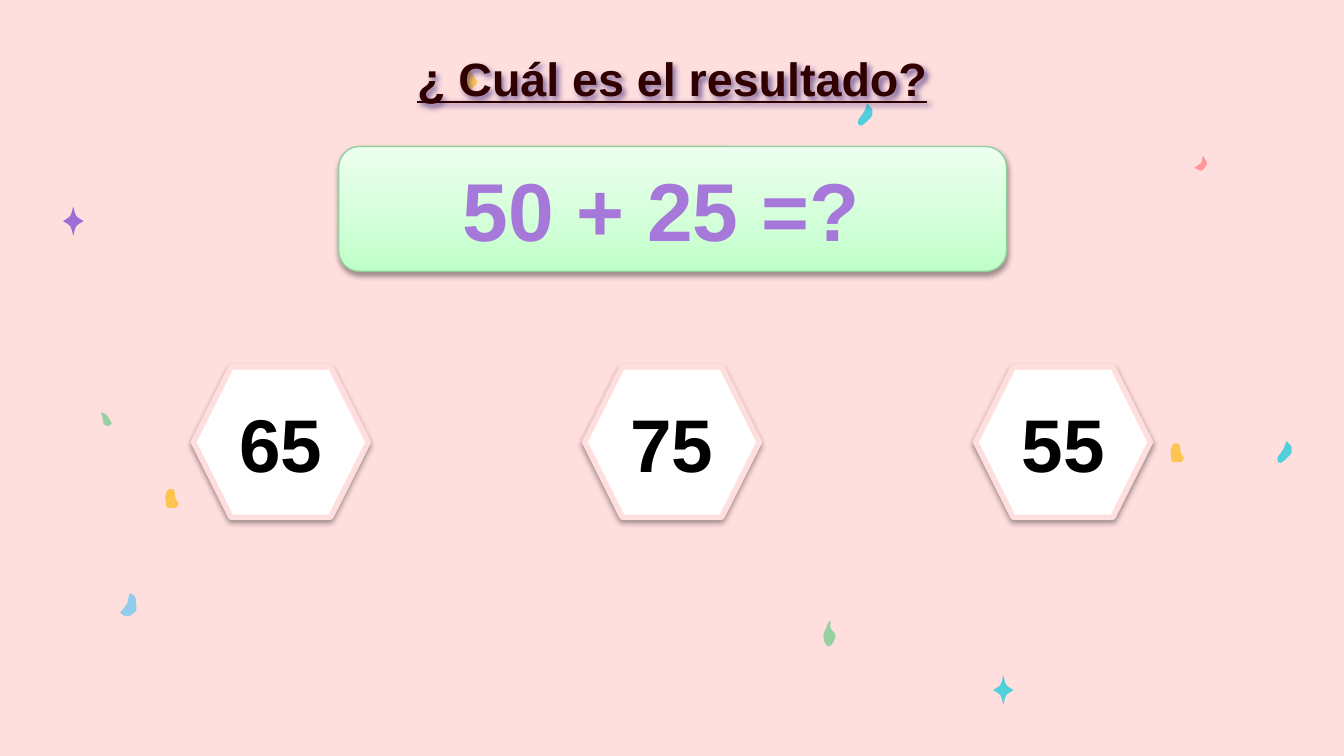
from dataclasses import dataclass
from copy import deepcopy
from math import cos, radians, sin

from lxml import etree
from pptx import Presentation
from pptx import util as u
from pptx.dml.color import RGBColor
from pptx.enum import shapes, text
from pptx.oxml.ns import qn

Point = tuple[float, float]


@dataclass(frozen=True)
class Theme:
    font: str = "Arial"
    background: str = "FFDEDE"
    title: str = "300000"
    question: str = "A578DA"
    answer: str = "000000"
    white: str = "FFFFFF"
    border: str = "93CE9C"
    gradient: tuple = ((0, "BEFFC7"), (0.35, "D1FFD7"), (1, "EDFFEF"))
    orange: str = "FCC552"
    teal: str = "52CFDD"
    green: str = "98D1A1"
    blue: str = "8FCDEA"
    red: str = "FF9797"
    purple: str = "9D6ED3"
    title_size: int = 25
    question_size: int = 44
    answer_size: int = 40


@dataclass(frozen=True)
class Frame:
    left: float
    top: float
    width: float
    height: float

    def lengths(self) -> list:
        return [u.Inches(v) for v in (self.left, self.top, self.width, self.height)]


@dataclass(frozen=True)
class Confetti:
    outline: str
    color: str
    frame: Frame
    rotation: float = 0


@dataclass(frozen=True)
class Shadow:
    color: str
    alpha: int
    blur: float
    distance: float
    direction: int


THEME = Theme()
SOFT_SHADOW = Shadow("000000", 38, 3.15, 1.57, 90)
TITLE_SHADOW = Shadow("3F2A78", 65, 3, 1.5, 45)
DETAIL = 100

OUTLINES: dict[str, list[Point]] = {
    "flake": [(1, -7), (-2, -7), (-4, -4), (-4.5, 0), (-4, 3), (-4, 5), (-3, 7),
              (0, 7), (3, 7), (5, 4), (3, 0), (2, -6)],
    "swoosh": [(-5.5, 3), (-5.5, 6), (-3.5, 7), (-0.5, 5), (1.5, 3), (3.5, 1),
               (4.5, -1), (4.5, -5), (2.5, -7.5), (1.5, -9), (0.5, -8),
               (-0.5, -5), (-1.5, -3), (-3.5, 0)],
    "leaf": [(5, 3), (4, 1), (1, -3), (-2, -5), (-4, -5), (-3, -3), (-2, 2),
             (-1, 4), (2, 5), (4, 4)],
    "moon": [(6.5, -1), (5.5, -6), (2.5, -8), (1.5, -8), (0.5, -5), (-0.5, -1),
             (-3.5, 3), (-5.5, 5), (-5.5, 6), (-2.5, 8), (1.5, 8), (4.5, 6), (6.5, 4)],
    "petal": [(4.5, -1.5), (2.5, -5.5), (1.5, -6.5), (0.5, -1.5), (-2.5, 1.5),
              (-4.5, 3), (-3.5, 4), (0.5, 5.5), (2.5, 3.5), (4.5, 0.5)],
    "drop": [(0.5, -9.5), (-1.5, -7.5), (-2.5, -4.5), (-4.5, 0), (-4, 5), (-1.5, 8.5),
             (0.5, 8.5), (2.5, 6.5), (4.5, 2), (3.5, -1), (1.5, -3), (0.5, -6)],
    "seed": [(0.5, -8.5), (-2.5, -5.5), (-4.5, 0), (-3.5, 6.5), (-1.5, 8.5),
             (0.5, 7), (3.5, 3.5), (3.5, 1), (0.5, -4)],
    "star": [(0, -10.5), (1, -7), (2.5, -3.5), (6, -1), (7.5, 0), (6, 1), (2.5, 3.5),
             (1, 7), (0, 10.5), (-1, 7), (-2.5, 3.5), (-6, 1), (-7.5, 0), (-6, -1),
             (-2.5, -3.5), (-1, -7)],
}

CONFETTI = [
    Confetti("flake", THEME.orange, Frame(1.23, 3.64, 0.1, 0.14), 3.3),
    Confetti("swoosh", THEME.teal, Frame(6.36, 0.82, 0.17, 0.08), 292.8),
    Confetti("leaf", THEME.green, Frame(0.74, 3.08, 0.1, 0.08), 90),
    Confetti("moon", THEME.blue, Frame(0.87, 4.44, 0.17, 0.12), 90),
    Confetti("petal", THEME.red, Frame(8.88, 1.17, 0.11, 0.09), 90),
    Confetti("drop", THEME.green, Frame(6.13, 4.62, 0.09, 0.19), 11.4),
    Confetti("seed", THEME.orange, Frame(3.45, 0.51, 0.11, 0.15), 29.1),
    Confetti("swoosh", THEME.teal, Frame(9.48, 3.33, 0.17, 0.08), 292.8),
    Confetti("star", THEME.purple, Frame(0.47, 1.54, 0.15, 0.21)),
    Confetti("star", THEME.teal, Frame(7.39, 5.03, 0.15, 0.21)),
    Confetti("flake", THEME.orange, Frame(8.71, 3.3, 0.1, 0.14), 3.3),
]


def rgb(color: str) -> RGBColor:
    return RGBColor.from_string(color)


def paint(shape, color: str) -> None:
    shape.fill.solid()
    shape.fill.fore_color.rgb = rgb(color)


def smooth(points: list[Point], steps: int = 5) -> list[Point]:
    curve = []
    for i in range(len(points)):
        a, b, c, d = (points[(i + k) % len(points)] for k in (-1, 0, 1, 2))
        for step in range(steps):
            t = step / steps
            curve.append(tuple(
                (2 * q + (r - p) * t + (2 * p - 5 * q + 4 * r - s) * t**2
                 + (3 * q - p - 3 * r + s) * t**3) / 2
                for p, q, r, s in zip(a, b, c, d)))
    return curve


def add_confetti(page, piece: Confetti) -> None:
    angle = radians(piece.rotation)
    across, down = DETAIL * cos(angle), DETAIL * sin(angle)
    points = [(x * across + y * down, y * across - x * down)
              for x, y in smooth(OUTLINES[piece.outline])]
    builder = page.shapes.build_freeform(*points[0], scale=u.Inches(0.01) / DETAIL)
    builder.add_line_segments(points[1:], close=True)
    shape = builder.convert_to_shape()
    shape.left, shape.top, shape.width, shape.height = piece.frame.lengths()
    shape.rotation = piece.rotation
    shape.shadow.inherit = False
    paint(shape, piece.color)
    shape.line.fill.background()


def add_shadow(effects, shadow: Shadow) -> None:
    outer = etree.SubElement(effects, qn("a:outerShdw"), {
        "blurRad": str(u.Pt(shadow.blur)), "dist": str(u.Pt(shadow.distance)),
        "dir": str(shadow.direction * 60000), "rotWithShape": "0"})
    color = etree.SubElement(outer, qn("a:srgbClr"), val=shadow.color)
    etree.SubElement(color, qn("a:alpha"), val=str(shadow.alpha * 1000))


def write(box, words: str, size: int, color: str, anchor, **extra) -> None:
    box.text_frame.word_wrap = True
    box.text_frame.vertical_anchor = anchor
    para = box.text_frame.paragraphs[0]
    para.alignment = text.PP_ALIGN.CENTER
    span = para.add_run()
    span.text = words
    span.font.color.rgb = rgb(color)
    formats = {"name": THEME.font, "size": u.Pt(size), "bold": True, **extra}
    for name, value in formats.items():
        setattr(span.font, name, value)


def add_card(page, kind, frame: Frame, line: str, weight: float):
    card = page.shapes.add_shape(kind, *frame.lengths())
    card.line.color.rgb = rgb(line)
    card.line.width = u.Pt(weight)
    card.shadow.inherit = False
    add_shadow(card._element.spPr.find(qn("a:effectLst")), SOFT_SHADOW)
    return card


def add_title(page) -> None:
    title = page.shapes.add_textbox(*Frame(1.44, 0.11, 7.12, 0.68).lengths())
    for side in ("left", "top", "right", "bottom"):
        setattr(title.text_frame, f"margin_{side}", 0)
    write(title, "¿ Cuál es el resultado?", THEME.title_size, THEME.title,
          text.MSO_ANCHOR.BOTTOM, underline=True)
    add_shadow(etree.SubElement(title._element.spPr, qn("a:effectLst")), TITLE_SHADOW)


def add_question(page) -> None:
    card = add_card(page, shapes.MSO_SHAPE.ROUNDED_RECTANGLE,
                    Frame(2.52, 1.09, 4.97, 0.93), THEME.border, 0.75)
    card.fill.gradient()
    card.fill.gradient_angle = 90
    stops = card._element.spPr.find(".//" + qn("a:gsLst"))
    stops.append(deepcopy(stops[0]))
    for stop, (position, color) in zip(card.fill.gradient_stops, THEME.gradient):
        stop.position = position
        stop.color.rgb = rgb(color)
    write(card, "50 + 25 =? ", THEME.question_size, THEME.question, text.MSO_ANCHOR.MIDDLE)


def add_answers(page, answers: list[str]) -> None:
    for i, answer in enumerate(answers):
        card = add_card(page, shapes.MSO_SHAPE.HEXAGON,
                        Frame(1.44 + 2.91 * i, 2.73, 1.3, 1.12), THEME.background, 3)
        paint(card, THEME.white)
        write(card, answer, THEME.answer_size, THEME.answer, text.MSO_ANCHOR.MIDDLE)


def main() -> None:
    deck = Presentation()
    deck.slide_width, deck.slide_height = u.Inches(10), u.Inches(10 * 9 / 16)
    page = deck.slides.add_slide(deck.slide_layouts[6])
    paint(page.background, THEME.background)
    for piece in CONFETTI:
        add_confetti(page, piece)
    add_title(page)
    add_question(page)
    add_answers(page, ["65", "75", "55"])
    deck.save("out.pptx")


if __name__ == "__main__":
    main()
